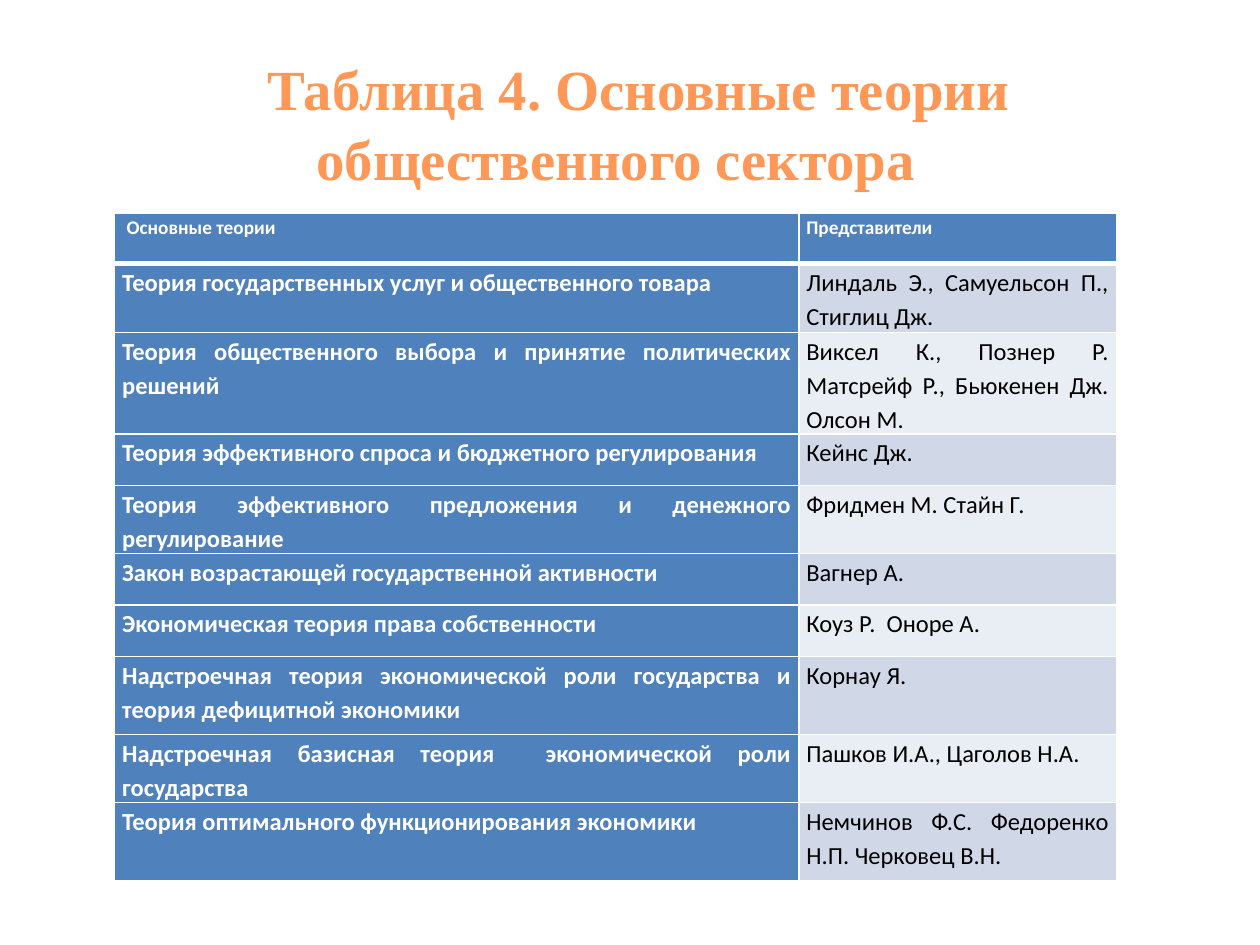
from dataclasses import dataclass

from lxml import etree
from pptx import Presentation
from pptx import util as u
from pptx.dml.color import RGBColor
from pptx.enum import text
from pptx.oxml.ns import qn


@dataclass(frozen=True)
class Theme:
    title_font: str = "Times New Roman"
    body_font: str = "Calibri"
    title: str = "FF9856"
    white: str = "FFFFFF"
    black: str = "000000"
    accent: str = "4F81BD"
    bands: tuple = ("D0D8E8", "E9EDF4")
    lead_size: float = 39.6
    title_size: float = 32.4
    header_size: float = 11
    body_size: float = 14


T = Theme()
W, H = u.Inches(10), u.Inches(7.5)
COLS = (5.43, 2.52)
ROW_HEIGHTS = (0.4, 0.55, 0.52, 0.41, 0.41, 0.41, 0.41, 0.62, 0.41, 0.62)
ROWS = (
    (" Основные теории", "Представители"),
    ("Теория государственных услуг и общественного товара",
     "Линдаль Э., Самуельсон П., Стиглиц Дж."),
    ("Теория общественного выбора и принятие политических решений ",
     "Виксел К., Познер Р. Матсрейф Р., Бьюкенен Дж. Олсон М."),
    ("Теория эффективного спроса и бюджетного регулирования", "Кейнс Дж."),
    ("Теория эффективного предложения и денежного регулирование",
     "Фридмен М. Стайн Г."),
    ("Закон возрастающей государственной активности", "Вагнер А."),
    ("Экономическая теория права собственности", "Коуз Р.  Оноре А."),
    ("Надстроечная теория экономической роли государства и теория дефицитной экономики",
     "Корнау Я."),
    ("Надстроечная базисная теория  экономической роли государства",
     "Пашков И.А., Цаголов Н.А."),
    ("Теория оптимального функционирования экономики",
     "Немчинов Ф.С. Федоренко Н.П. Черковец В.Н."),
)


def add_text(p, content, *, size, color, font=T.body_font, bold=False):
    r = p.add_run()
    r.text = content
    r.font.name, r.font.size, r.font.bold = font, u.Pt(size), bold
    r.font.color.rgb = RGBColor.from_string(color)


def add_title(s):
    sp = s.shapes.add_textbox(int(W * 0.05), int(H * 0.04), int(W * 0.9), int(H / 6))
    tf = sp.text_frame
    tf.word_wrap = True
    tf.vertical_anchor = text.MSO_ANCHOR.MIDDLE
    p = tf.paragraphs[0]
    p.alignment = text.PP_ALIGN.CENTER
    style = dict(font=T.title_font, color=T.title, bold=True)
    add_text(p, " ", size=T.lead_size, **style)
    add_text(p, "Таблица 4. Основные теории общественного сектора  ",
             size=T.title_size, **style)


def set_borders(cell, **widths):
    tc_pr = cell._tc.get_or_add_tcPr()
    for side in "LRTB":
        ln = etree.SubElement(tc_pr, qn(f"a:ln{side}"), w=str(u.Pt(widths.get(side, 1))))
        fill = etree.SubElement(ln, qn("a:solidFill"))
        etree.SubElement(fill, qn("a:srgbClr"), val=T.white)


def fill_cell(cell, content, *, fill, borders, **fmt):
    set_borders(cell, **borders)
    cell.fill.solid()
    cell.fill.fore_color.rgb = RGBColor.from_string(fill)
    cell.margin_left = cell.margin_right = u.Inches(0.06)
    cell.margin_top = cell.margin_bottom = 0
    p = cell.text_frame.paragraphs[0]
    p.alignment = text.PP_ALIGN.JUSTIFY
    p.line_spacing, p.space_after = 1.15, u.Pt(6)
    add_text(p, content, **fmt)


def add_theory_table(s):
    tbl = s.shapes.add_table(
        len(ROWS), len(COLS), u.Inches(0.91), u.Inches(1.69),
        u.Inches(sum(COLS)), u.Inches(sum(ROW_HEIGHTS))).table
    for col, width in zip(tbl.columns, COLS):
        col.width = u.Inches(width)
    for i, (row, height, values) in enumerate(zip(tbl.rows, ROW_HEIGHTS, ROWS)):
        row.height = u.Inches(height)
        borders = {0: {"B": 3}, 1: {"T": 3}}.get(i, {})
        for j, (cell, value) in enumerate(zip(row.cells, values)):
            strong = i == 0 or j == 0
            fill_cell(cell, value, borders=borders, bold=strong,
                      fill=T.accent if strong else T.bands[(i - 1) % 2],
                      color=T.white if strong else T.black,
                      size=T.body_size if i else T.header_size)


def main():
    prs = Presentation()
    prs.slide_width, prs.slide_height = W, H
    s = prs.slides.add_slide(prs.slide_layouts[6])
    add_title(s)
    add_theory_table(s)
    prs.save("out.pptx")


if __name__ == "__main__":
    main()
